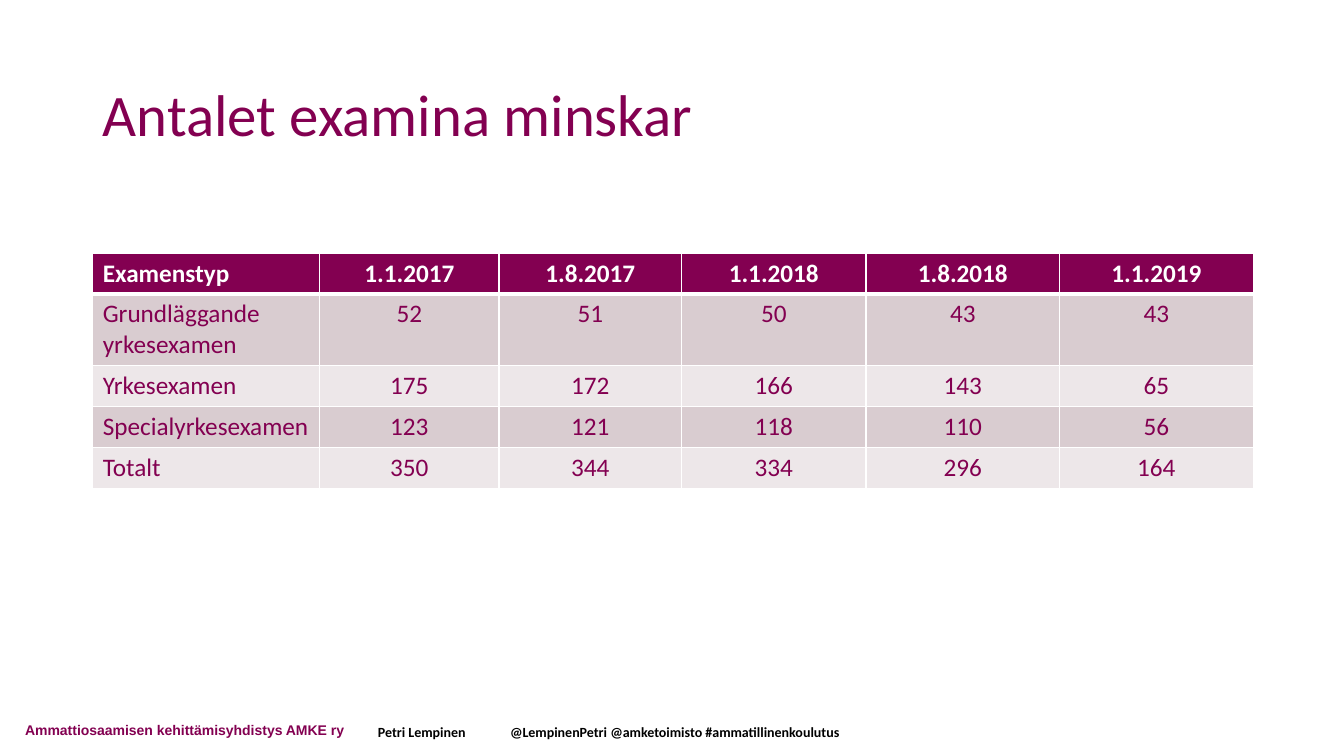
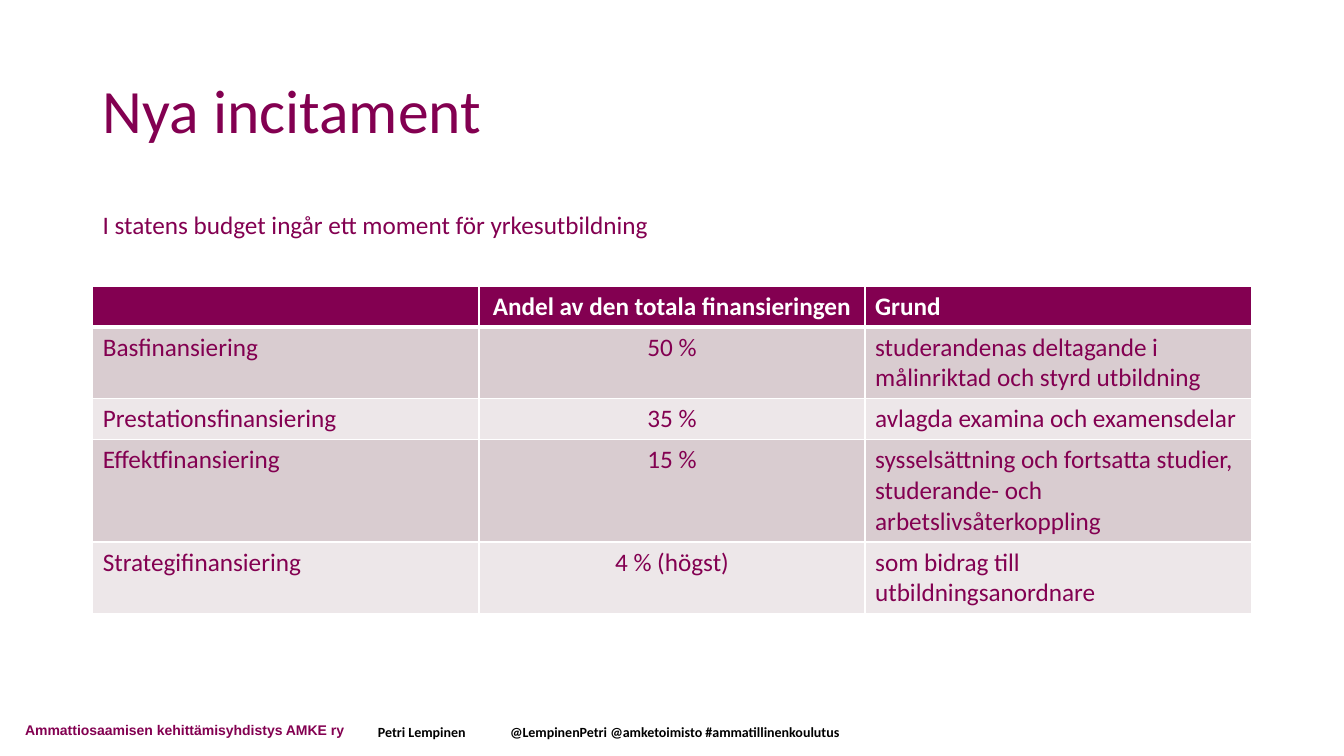
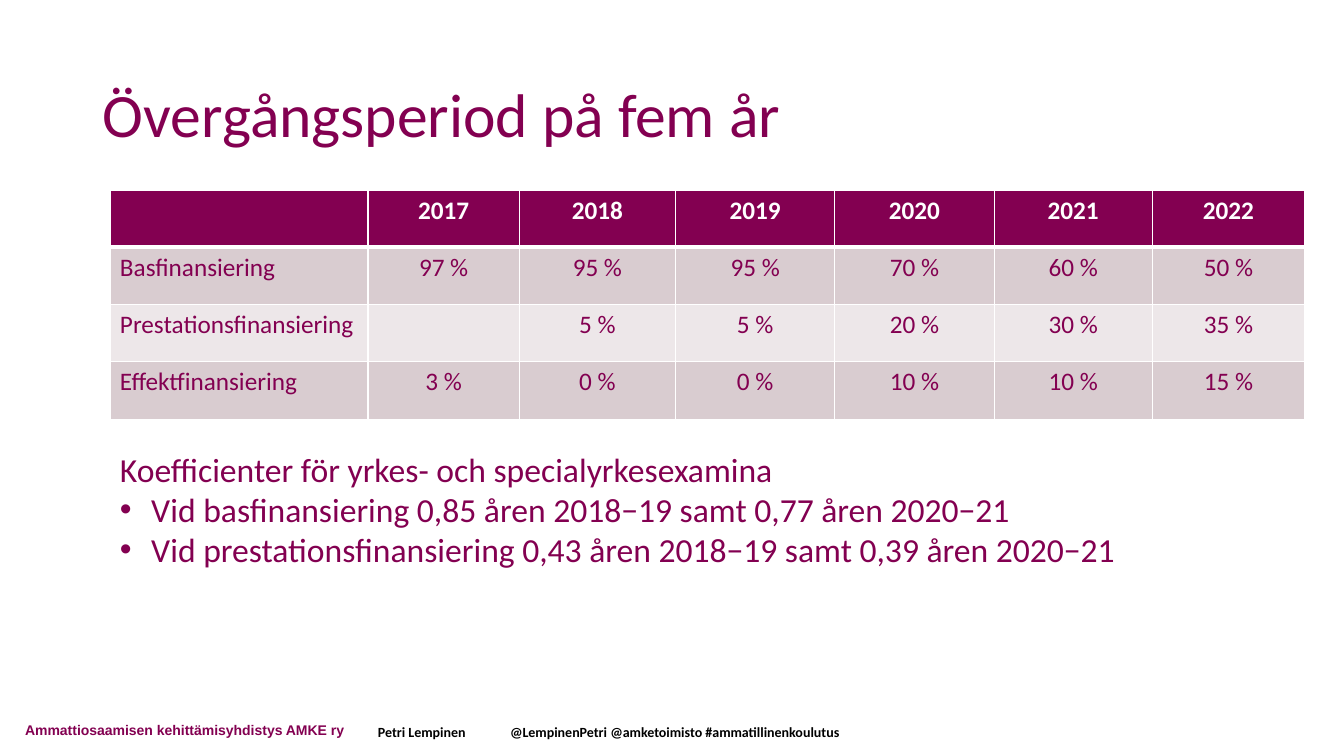
from dataclasses import dataclass

from lxml import etree
from pptx import Presentation
from pptx.dml.color import RGBColor
from pptx.enum import text as t
from pptx.oxml import ns
from pptx.util import Inches, Pt


@dataclass(frozen=True)
class Theme:
    plum: str = "830051"
    white: str = "FFFFFF"
    black: str = "000000"
    bands: tuple = ("D9CCD0", "EDE7E9")
    font: str = "Calibri"
    footer_font: str = "Arial"
    title: float = 44
    list: float = 24
    text: float = 18
    footer: float = 10
    line: float = 1
    header_line: float = 3


TH = Theme()
TITLE_BOX = (0.92, 0.44, 11.5, 1.45)
LAYOUT_LIST, LAYOUT_TITLE = 1, 5


def place(sp, box):
    for name, value in zip(("left", "top", "width", "height"), box):
        setattr(sp, name, Inches(value))


def add_element(parent, tag, **attrs):
    return etree.SubElement(parent, ns.qn(tag), attrs)


def write(p, words, size=TH.text, color=TH.plum, **fmt):
    r = p.add_run()
    r.text = words
    for name, value in {"name": TH.font, "size": Pt(size), "bold": False, **fmt}.items():
        setattr(r.font, name, value)
    r.font.color.rgb = RGBColor.from_string(color)


def set_frame(tf, **fmt):
    for name, value in {"word_wrap": True, **fmt}.items():
        setattr(tf, name, value)


def add_text(s, box, words, anchor=t.MSO_ANCHOR.TOP, **fmt):
    sp = s.shapes.add_textbox(*map(Inches, box))
    set_frame(sp.text_frame, vertical_anchor=anchor,
              auto_size=t.MSO_AUTO_SIZE.SHAPE_TO_FIT_TEXT)
    write(sp.text_frame.paragraphs[0], words, **fmt)
    return sp


def add_footer(prs, s):
    """Build the two footer texts on s and move them to the slide master."""
    fmt = dict(size=TH.footer, bold=True, anchor=t.MSO_ANCHOR.MIDDLE)
    owner = add_text(s, (0.15, 7.11, 3.69, 0.27),
                     "Ammattiosaamisen kehittämisyhdistys AMKE ry",
                     name=TH.footer_font, **fmt)
    author = add_text(s, (3.65, 7.13, 5.42, 0.27),
                      "Petri Lempinen\t@LempinenPetri @amketoimisto #ammatillinenkoulutus",
                      color=TH.black, **fmt)
    tabs = add_element(author.text_frame.paragraphs[0]._p.get_or_add_pPr(), "a:tabLst")
    add_element(tabs, "a:tab", pos=str(Inches(1.31)), algn="l")
    shapes = prs.slide_master.shapes
    next_id = max(sp.shape_id for sp in shapes) + 1
    for number, sp in enumerate((owner, author), next_id):
        sp.element.xpath(".//p:cNvPr")[0].set("id", str(number))
        shapes.element.append(sp.element)


def add_slide(prs, layout, title, size=TH.title, box=TITLE_BOX):
    s = prs.slides.add_slide(prs.slide_layouts[layout])
    place(s.shapes.title, box)
    tf = s.shapes.title.text_frame
    set_frame(tf, vertical_anchor=t.MSO_ANCHOR.MIDDLE, auto_size=t.MSO_AUTO_SIZE.NONE)
    p = tf.paragraphs[0]
    p.alignment, p.line_spacing = t.PP_ALIGN.LEFT, 0.9
    write(p, title, size=size)
    return s


def set_borders(cell, row):
    """White lines, with a thicker one between the header and the first row."""
    widths = {"L": TH.line, "R": TH.line,
              "T": TH.header_line if row == 1 else TH.line,
              "B": TH.header_line if row == 0 else TH.line}
    tcPr = cell._tc.get_or_add_tcPr()
    for i, (side, width) in enumerate(widths.items()):
        ln = add_element(tcPr, f"a:ln{side}", w=str(Pt(width)))
        add_element(add_element(ln, "a:solidFill"), "a:srgbClr", val=TH.white)
        tcPr.insert(i, ln)


def add_grid(s, left, top, widths, heights, rows, left_columns=(0,)):
    """Table with a plum header and banded rows; other columns are centred."""
    frame = s.shapes.add_table(len(rows), len(widths), Inches(left), Inches(top),
                               Inches(sum(widths)), Inches(sum(heights)))
    table = frame.table
    for column, width in zip(table.columns, widths):
        column.width = Inches(width)
    for r, (row, height) in enumerate(zip(rows, heights)):
        table.rows[r].height = Inches(height)
        for c, words in enumerate(row):
            cell = table.cell(r, c)
            set_borders(cell, r)
            cell.fill.solid()
            fill = TH.bands[(r - 1) % 2] if r else TH.plum
            cell.fill.fore_color.rgb = RGBColor.from_string(fill)
            p = cell.text_frame.paragraphs[0]
            p.alignment = t.PP_ALIGN.LEFT if c in left_columns else t.PP_ALIGN.CENTER
            if words:
                write(p, words, color=TH.plum if r else TH.white, bold=r == 0)


def add_list(s, box, heading, items):
    body = s.placeholders[1]
    place(body, box)
    tf = body.text_frame
    set_frame(tf, auto_size=t.MSO_AUTO_SIZE.SHAPE_TO_FIT_TEXT)
    for i, words in enumerate((heading, *items)):
        p = tf.add_paragraph() if i else tf.paragraphs[0]
        p.space_before = Pt(0)
        pPr = p._p.get_or_add_pPr()
        indent = Inches(0.31) if i else 0
        pPr.set("marL", str(indent))
        pPr.set("indent", str(-indent))
        if i:
            add_element(pPr, "a:buFont", typeface="Arial")
            add_element(pPr, "a:buChar", char="•")
        else:
            add_element(pPr, "a:buNone")
        write(p, words, size=TH.list)


def exams_slide(prs):
    s = add_slide(prs, LAYOUT_TITLE, "Antalet examina minskar", size=42)
    add_grid(s, 0.92, 2.51, (2.25, 1.78, 1.81, 1.83, 1.92, 1.92), (0.4, 0.71, 0.4, 0.4, 0.4), (
        ("Examenstyp", "1.1.2017", "1.8.2017", "1.1.2018", "1.8.2018", "1.1.2019"),
        ("Grundläggande yrkesexamen", "52", "51", "50", "43", "43"),
        ("Yrkesexamen", "175", "172", "166", "143", "65"),
        ("Specialyrkesexamen", "123", "121", "118", "110", "56"),
        ("Totalt", "350", "344", "334", "296", "164"),
    ))
    return s


def incentives_slide(prs):
    left, _, width, height = TITLE_BOX
    s = add_slide(prs, LAYOUT_TITLE, "Nya incitament", box=(left, 0.4, width, height))
    add_grid(s, left, 2.84, (3.83,) * 3, (0.4, 0.71, 0.4, 1.01, 0.71), (
        ("", "Andel av den totala finansieringen", "Grund"),
        ("Basfinansiering", "50 %",
         "studerandenas deltagande i målinriktad och styrd utbildning"),
        ("Prestationsfinansiering", "35 %", "avlagda examina och examensdelar"),
        ("Effektfinansiering", "15 %",
         "sysselsättning och fortsatta studier, studerande- och arbetslivsåterkoppling"),
        ("Strategifinansiering", "4 % (högst)", "som bidrag till utbildningsanordnare"),
    ), left_columns=(0, 2))
    add_text(s, (left, 2.03, width, 0.4),
             "I statens budget ingår ett moment för yrkesutbildning")


def transition_slide(prs):
    s = add_slide(prs, LAYOUT_LIST, "Övergångsperiod på fem år")
    add_grid(s, 1.09, 1.89, (2.56, 1.5, 1.55, 1.58, 1.58, 1.57, 1.51), (0.56, 0.57, 0.57, 0.57), (
        ("", "2017", "2018", "2019", "2020", "2021", "2022"),
        ("Basfinansiering", "97 %", "95 %", "95 %", "70 %", "60 %", "50 %"),
        ("Prestationsfinansiering", "", "5 %", "5 %", "20 %", "30 %", "35 %"),
        ("Effektfinansiering", "3 %", "0 %", "0 %", "10 %", "10 %", "15 %"),
    ))
    add_list(s, (1.09, 4.4, 11.5, 1.31), "Koefficienter för yrkes- och specialyrkesexamina", (
        "Vid basfinansiering 0,85 åren 2018−19 samt 0,77 åren 2020−21",
        "Vid prestationsfinansiering 0,43 åren 2018−19 samt 0,39 åren 2020−21",
    ))


def main():
    prs = Presentation()
    prs.slide_width, prs.slide_height = Inches(13.33), Inches(7.5)
    add_footer(prs, exams_slide(prs))
    incentives_slide(prs)
    transition_slide(prs)
    prs.save("out.pptx")


if __name__ == "__main__":
    main()
